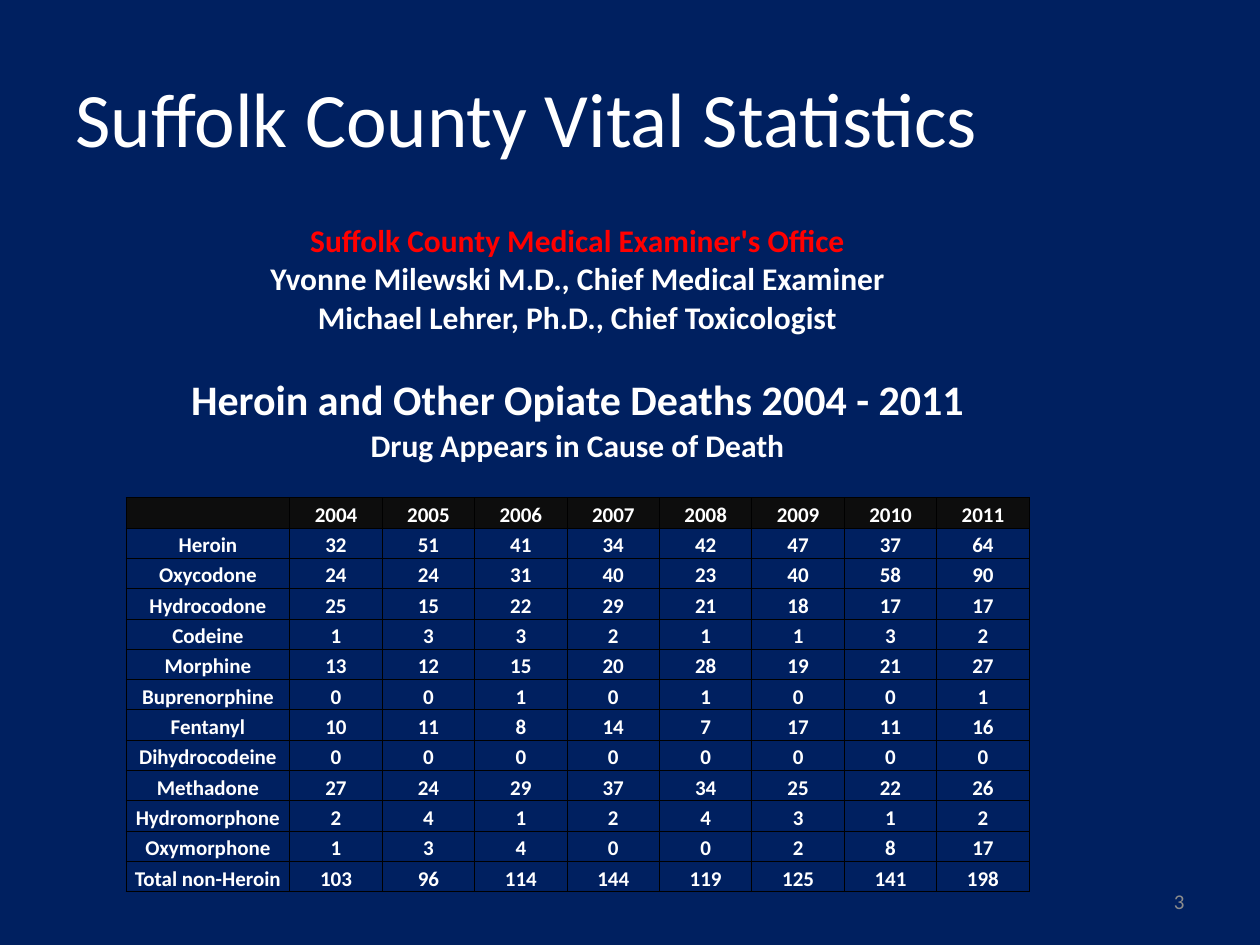
from dataclasses import dataclass

from lxml.etree import SubElement
from pptx import Presentation
from pptx.dml.color import RGBColor
from pptx.enum.text import MSO_ANCHOR, PP_ALIGN
from pptx.oxml.ns import qn
from pptx.util import Inches, Pt


@dataclass(frozen=True)
class Theme:
    font: str = "Calibri"
    background: str = "002060"
    text: str = "FFFFFF"
    accent: str = "FF0000"
    muted: str = "8C8C8C"
    header_fill: str = "0D0D0D"
    border: str = "000000"
    border_width: float = 0.5
    title_size: int = 44
    heading_size: int = 24
    caption_size: int = 18
    body_size: int = 12


THEME = Theme()


@dataclass(frozen=True)
class Line:
    text: str
    size: int = THEME.body_size
    color: str = THEME.text
    bold: bool = True
    align: PP_ALIGN = PP_ALIGN.CENTER
    space_before: int = 0


@dataclass(frozen=True)
class Label:
    left: float
    top: float
    width: float
    height: float
    line: Line


LABELS = [
    Label(0.5, 0.3, 9, 1.25, Line("Suffolk County Vital Statistics", THEME.title_size,
                                  bold=False, align=PP_ALIGN.LEFT)),
    Label(7.17, 6.95, 2.33, 0.4, Line("3", color=THEME.muted, bold=False,
                                      align=PP_ALIGN.RIGHT)),
]

CAPTION = [
    Line("Suffolk County Medical Examiner's Office", THEME.caption_size, THEME.accent),
    Line("Yvonne Milewski M.D., Chief Medical Examiner", THEME.caption_size),
    Line("Michael Lehrer, Ph.D., Chief Toxicologist", THEME.caption_size),
    Line("Heroin and Other Opiate Deaths 2004 - 2011", THEME.heading_size, space_before=22),
    Line("Drug Appears in Cause of Death", THEME.caption_size),
]

YEARS = range(2004, 2012)
DEATHS = {
    "Heroin": (32, 51, 41, 34, 42, 47, 37, 64),
    "Oxycodone": (24, 24, 31, 40, 23, 40, 58, 90),
    "Hydrocodone": (25, 15, 22, 29, 21, 18, 17, 17),
    "Codeine": (1, 3, 3, 2, 1, 1, 3, 2),
    "Morphine": (13, 12, 15, 20, 28, 19, 21, 27),
    "Buprenorphine": (0, 0, 1, 0, 1, 0, 0, 1),
    "Fentanyl": (10, 11, 8, 14, 7, 17, 11, 16),
    "Dihydrocodeine": (0, 0, 0, 0, 0, 0, 0, 0),
    "Methadone": (27, 24, 29, 37, 34, 25, 22, 26),
    "Hydromorphone": (2, 4, 1, 2, 4, 3, 1, 2),
    "Oxymorphone": (1, 3, 4, 0, 0, 2, 8, 17),
    "Total non-Heroin": (103, 96, 114, 144, 119, 125, 141, 198),
}

TABLE_LEFT, TABLE_TOP, TABLE_WIDTH, TABLE_HEIGHT = 1, 1.5, 7.17, 5.58
DRUG_WIDTH, CAPTION_HEIGHT = 1.3, 2.45
CELL_INSETS = {"margin_left": 0.01, "margin_right": 0.01, "margin_top": 0.01, "margin_bottom": 0}


def write_lines(frame, lines: list[Line]) -> None:
    for index, line in enumerate(lines):
        paragraph = frame.add_paragraph() if index else frame.paragraphs[0]
        paragraph.alignment = line.align
        if line.space_before:
            paragraph.space_before = Pt(line.space_before)
        if not line.text:
            SubElement(paragraph._p, qn("a:endParaRPr"), sz=str(line.size * 100))
            continue
        run = paragraph.add_run()
        run.text = line.text
        font_format = {"name": THEME.font, "size": Pt(line.size), "bold": line.bold}
        for attribute, value in font_format.items():
            setattr(run.font, attribute, value)
        run.font.color.rgb = RGBColor.from_string(line.color)


def add_label(slide, label: Label) -> None:
    box = slide.shapes.add_textbox(Inches(label.left), Inches(label.top),
                                   Inches(label.width), Inches(label.height))
    frame = box.text_frame
    frame.word_wrap = True
    frame.vertical_anchor = MSO_ANCHOR.MIDDLE
    write_lines(frame, [label.line])


def set_borders(cell, visible: str) -> None:
    properties = cell._tc.get_or_add_tcPr()
    for side in "LRTB":
        edge = SubElement(properties, qn(f"a:ln{side}"), w=str(Pt(THEME.border_width)))
        if side in visible:
            fill = SubElement(edge, qn("a:solidFill"))
            SubElement(fill, qn("a:srgbClr"), val=THEME.border)
        else:
            SubElement(edge, qn("a:noFill"))


def format_cell(cell, anchor: MSO_ANCHOR, borders: str = "LRTB", fill: str | None = None) -> None:
    for attribute, inset in CELL_INSETS.items():
        setattr(cell, attribute, Inches(inset))
    cell.vertical_anchor = anchor
    set_borders(cell, borders)
    if fill:
        cell.fill.solid()
        cell.fill.fore_color.rgb = RGBColor.from_string(fill)
    else:
        cell.fill.background()


def add_deaths_table(slide) -> None:
    grid = [("", *YEARS)] + [(drug, *counts) for drug, counts in DEATHS.items()]
    row_count, column_count = len(grid) + 1, len(YEARS) + 1
    table = slide.shapes.add_table(row_count, column_count, Inches(TABLE_LEFT), Inches(TABLE_TOP),
                                   Inches(TABLE_WIDTH), Inches(TABLE_HEIGHT)).table
    table.first_row = table.horz_banding = False

    year_width = (TABLE_WIDTH - DRUG_WIDTH) / len(YEARS)
    for index, column in enumerate(table.columns):
        column.width = Inches(year_width if index else DRUG_WIDTH)
    row_height = (TABLE_HEIGHT - CAPTION_HEIGHT) / len(grid)
    for index, row in enumerate(table.rows):
        row.height = Inches(row_height if index else CAPTION_HEIGHT)

    for column in range(column_count):
        format_cell(table.cell(0, column), MSO_ANCHOR.MIDDLE, borders="B")
    caption = table.cell(0, 0)
    caption.merge(table.cell(0, column_count - 1))
    write_lines(caption.text_frame, CAPTION)

    for row, values in enumerate(grid, start=1):
        for column, value in enumerate(values):
            cell = table.cell(row, column)
            format_cell(cell, MSO_ANCHOR.BOTTOM, fill=THEME.header_fill if row == 1 else None)
            write_lines(cell.text_frame, [Line(str(value))])


def main() -> None:
    deck = Presentation()
    deck.slide_width, deck.slide_height = Inches(10), Inches(7.5)
    slide = deck.slides.add_slide(deck.slide_layouts[6])
    slide.background.fill.solid()
    slide.background.fill.fore_color.rgb = RGBColor.from_string(THEME.background)
    add_deaths_table(slide)
    for label in LABELS:
        add_label(slide, label)
    deck.save("out.pptx")


if __name__ == "__main__":
    main()
